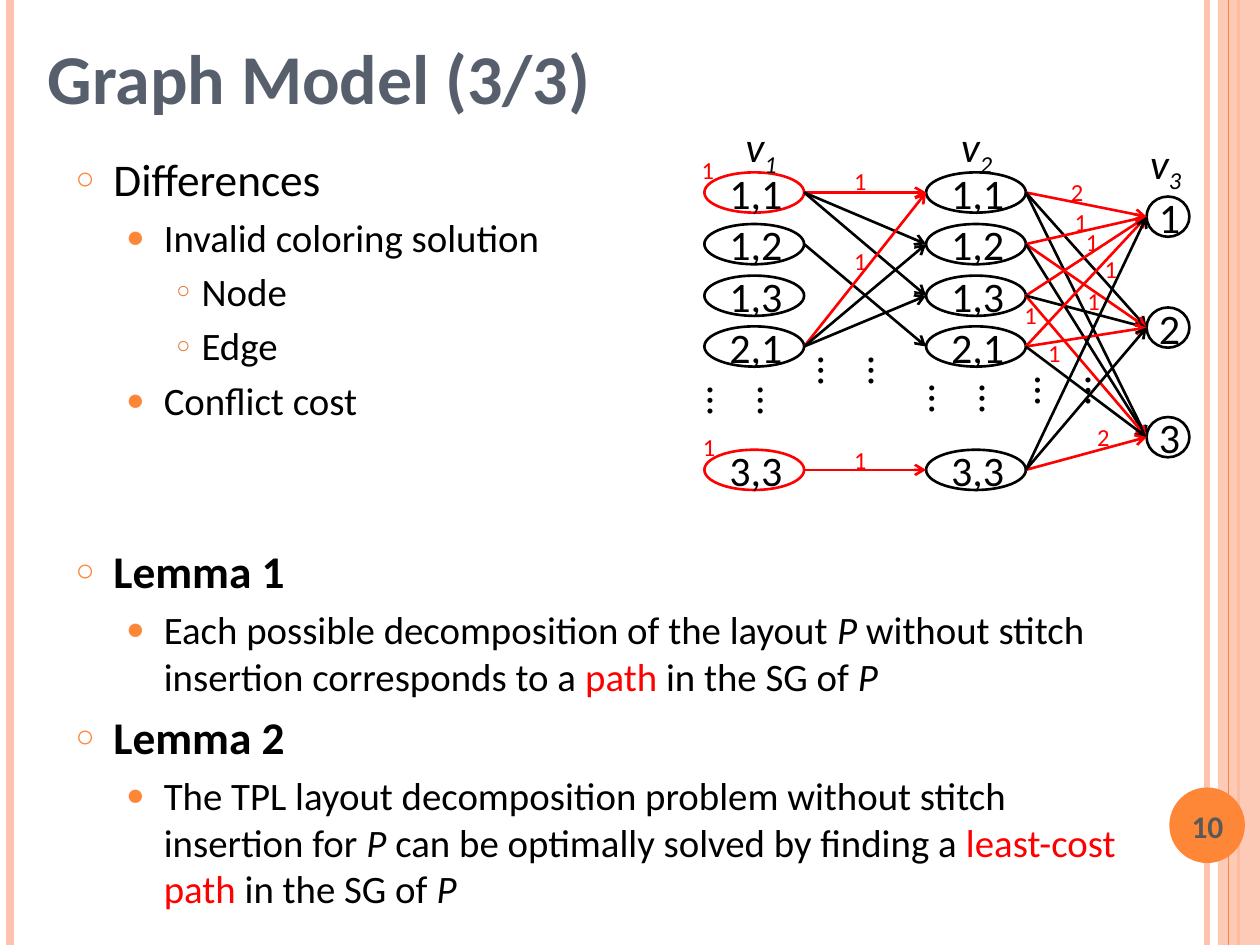
"""Build the Graph Model slide: two lemmas beside a three-stage solution graph."""
from lxml.etree import SubElement
from pptx import Presentation
from pptx.dml.color import RGBColor
from pptx.enum.shapes import MSO_CONNECTOR, MSO_SHAPE
from pptx.enum.text import MSO_ANCHOR, MSO_AUTO_SIZE, PP_ALIGN
from pptx.oxml.ns import qn
from pptx.util import Pt

FONT = "Calibri"
BLACK, RED, WHITE, ORANGE, PEACH = "000000", "FF0000", "FFFFFF", "FE8637", "FEC3AE"
SLATE, GREY, RUST = "575F6D", "595959", "E07631"

TITLE = "Graph Model (3/3)"
# level, space before, runs of (text, style)
OUTLINE = [
    (0, 6, [("Differences", "")]),
    (1, 4.4, [("Invalid coloring solution", "")]),
    (2, 4.4, [("Node", "")]),
    (2, 4.4, [("Edge", "")]),
    (1, 4.4, [("Conflict cost", "")]),
    (0, 69, [("Lemma 1", "bold")]),
    (1, 4.4, [("Each possible decomposition of the layout ", ""), ("P", "italic"),
              (" without stitch insertion corresponds to a ", ""), ("path", "red"),
              (" in the SG of", ""), (" P", "italic")]),
    (0, 6, [("Lemma 2", "bold")]),
    (1, 4.4, [("The TPL layout decomposition problem without stitch insertion for ", ""),
              ("P", "italic"), (" can be optimally solved by finding a ", ""),
              ("least-cost path", "red"), (" in the SG of ", ""), ("P", "italic")]),
]
# size, left margin, hanging indent, bullet, bullet colour, bullet percent
LEVELS = [(25.9, 21.6, 21.6, "○", ORANGE, 70),
          (22.2, 50.4, 21.6, "●", ORANGE, 80),
          (22.2, 72, 14.4, "○", RUST, 60)]

# x, width, colour
RULES_BACK = [(689.8, 3, PEACH), (5.8, 4.5, PEACH), (707.8, 1.5, ORANGE)]
RULES_FRONT = [(702, 0.75, ORANGE)]

PAIRS = {"1,1": 98.5, "1,2": 128, "1,3": 157.5, "2,1": 186.5, "3,3": 257}
COLORS = {"1": 112.3, "2": 175.7, "3": 238.3}
# x, node width, node tops by label
STAGES = [(402.5, 57, PAIRS), (529.2, 57, PAIRS), (655.2, 24.5, COLORS)]
NODE_HEIGHT = 23
RED_NODES = {(0, "1,1"), (0, "3,3")}
# stage, source, red targets, black targets
EDGES = [
    (0, "1,1", ["1,1"], ["1,2", "1,3"]),
    (0, "1,2", [], ["2,1"]),
    (0, "2,1", ["1,1"], ["1,2", "1,3"]),
    (0, "3,3", ["3,3"], []),
    (1, "1,1", ["1"], ["2", "3"]),
    (1, "1,2", ["1", "2"], ["3"]),
    (1, "1,3", ["1", "3"], ["2"]),
    (1, "2,1", ["1", "2"], ["3"]),
    (1, "3,3", ["3"], ["1", "2"]),
]
STEALTH = {("1,3", "1"), ("1,3", "2")}
COSTS = [("1", 393.8, 85), ("1", 394.6, 243.4), ("1", 481, 91.4), ("1", 481, 136.8),
         ("1", 481, 250.6), ("2", 604.8, 97.9), ("1", 607, 114.5), ("1", 613.4, 126),
         ("1", 624.2, 141.8), ("2", 619.9, 237.6), ("1", 591.8, 189.4),
         ("1", 614.2, 159.8), ("1", 578.2, 167.8)]
STAGE_NAMES = [("1", 419, 65.5), ("2", 542.2, 65.5), ("3", 650.2, 74.9)]
# x, y, height
DOTS = [(416.9, 213.8, 43.2), (543.6, 212.4, 40.3), (480.2, 196.6, 45.4), (604.1, 208.1, 44.6)]


def rgb(color):
    return RGBColor.from_string(color)


def add_span(para, text, size, color=BLACK, bold=False, italic=False):
    span = para.add_run()
    span.text = text
    font = span.font
    font.name, font.size, font.bold, font.italic = FONT, Pt(size), bold, italic
    font.color.rgb = rgb(color)
    return span


def add_label(shapes, text, left, top, width, height, size, color=BLACK, **style):
    box = shapes.add_textbox(Pt(left), Pt(top), Pt(width), Pt(height))
    box.text_frame.word_wrap = True
    add_span(box.text_frame.paragraphs[0], text, size, color, **style)
    return box


def add_form(shapes, kind, left, top, width, height, fill=None, line=None):
    shape = shapes.add_shape(kind, Pt(left), Pt(top), Pt(width), Pt(height))
    shape.shadow.inherit = False
    if fill:
        shape.fill.solid()
        shape.fill.fore_color.rgb = rgb(fill)
    else:
        shape.fill.background()
    if line:
        shape.line.color.rgb = rgb(line)
        shape.line.width = Pt(1.5)
    else:
        shape.line.fill.background()
    return shape


def add_line(shapes, x1, y1, x2, y2, color, width, head=None):
    line = shapes.add_connector(MSO_CONNECTOR.STRAIGHT, Pt(x1), Pt(y1), Pt(x2), Pt(y2))
    line.line.color.rgb = rgb(color)
    line.line.width = Pt(width)
    properties = line._element.spPr
    if head:
        SubElement(properties.find(qn("a:ln")), qn("a:tailEnd"), type=head)
    SubElement(properties, qn("a:effectLst"))


def add_rules(shapes, rules):
    for x, width, color in rules:
        add_line(shapes, x, 0, x, 540, color, width)


def add_frame(shapes):
    add_rules(shapes, RULES_BACK)
    band = add_form(shapes, MSO_SHAPE.RECTANGLE, 696, 0, 24, 540, PEACH)
    tint = band._element.spPr.find(qn("a:solidFill"))[0]
    SubElement(tint, qn("a:alpha"), val="87000")
    add_rules(shapes, RULES_FRONT)
    add_form(shapes, MSO_SHAPE.OVAL, 668.2, 450, 43.2, 43.2, ORANGE)
    number = add_label(shapes, "10", 666, 451.4, 48, 41, 18, GREY, bold=True)
    number.text_frame.vertical_anchor = MSO_ANCHOR.MIDDLE
    number.text_frame.paragraphs[0].alignment = PP_ALIGN.CENTER


def place(holder, left, top, width, height, anchor):
    holder.left, holder.top, holder.width, holder.height = Pt(left), Pt(top), Pt(width), Pt(height)
    frame = holder.text_frame
    frame.word_wrap, frame.auto_size, frame.vertical_anchor = True, MSO_AUTO_SIZE.NONE, anchor
    return frame


def fill_outline(frame):
    for index, (level, before, spans) in enumerate(OUTLINE):
        para = frame.add_paragraph() if index else frame.paragraphs[0]
        size, margin, hanging, bullet, color, percent = LEVELS[level]
        para.level, para.space_before, para.alignment = level, Pt(before), PP_ALIGN.LEFT
        properties = para._p.get_or_add_pPr()
        properties.set("marL", str(Pt(margin)))
        properties.set("indent", str(-Pt(hanging)))
        SubElement(SubElement(properties, qn("a:buClr")), qn("a:srgbClr"), val=color)
        SubElement(properties, qn("a:buSzPct"), val=str(percent * 1000))
        SubElement(properties, qn("a:buChar"), char=bullet)
        for text, style in spans:
            add_span(para, text, size, RED if style == "red" else BLACK,
                     style == "bold", style == "italic")


def add_graph(shapes):
    for stage, (left, width, nodes) in enumerate(STAGES):
        shift = 7.2 if nodes is PAIRS else 0
        for name, top in nodes.items():
            color = RED if (stage, name) in RED_NODES else BLACK
            add_form(shapes, MSO_SHAPE.OVAL, left, top, width, NODE_HEIGHT, WHITE, color)
            add_label(shapes, name, left + shift, top - 6.5, width - shift, 36, 24)
    for stage, source, red, black in EDGES:
        left, width, sources = STAGES[stage]
        end, _, targets = STAGES[stage + 1]
        half = NODE_HEIGHT / 2
        for target in red + black:
            add_line(shapes, left + width, sources[source] + half, end, targets[target] + half,
                     RED if target in red else BLACK, 1.5,
                     "stealth" if (source, target) in STEALTH else "arrow")
    for cost, left, top in COSTS:
        add_label(shapes, cost, left, top, 18, 24.5, 14, RED)
    for number, left, top in STAGE_NAMES:
        box = add_label(shapes, "v", left, top, 38.2, 36, 24, italic=True)
        span = add_span(box.text_frame.paragraphs[0], number, 24, italic=True)
        span.font._element.set("baseline", "-25000")
    for left, top, height in DOTS:
        box = add_label(shapes, "……", left, top, 43.9, height, 24)
        box.text_frame._txBody.bodyPr.set("vert", "eaVert")


def main():
    deck = Presentation()
    deck.slide_width, deck.slide_height = Pt(720), Pt(540)
    page = deck.slides.add_slide(deck.slide_layouts[1])
    title = place(page.shapes.title, 20.2, 3.6, 674.6, 67.7, MSO_ANCHOR.BOTTOM)
    title.paragraphs[0].alignment = PP_ALIGN.LEFT
    add_span(title.paragraphs[0], TITLE, 40, SLATE, bold=True)
    fill_outline(place(page.placeholders[1], 36, 82.8, 624.2, 427, MSO_ANCHOR.TOP))
    add_frame(page.shapes)
    add_graph(page.shapes.add_group_shape().shapes)
    deck.save("out.pptx")


if __name__ == "__main__":
    main()
